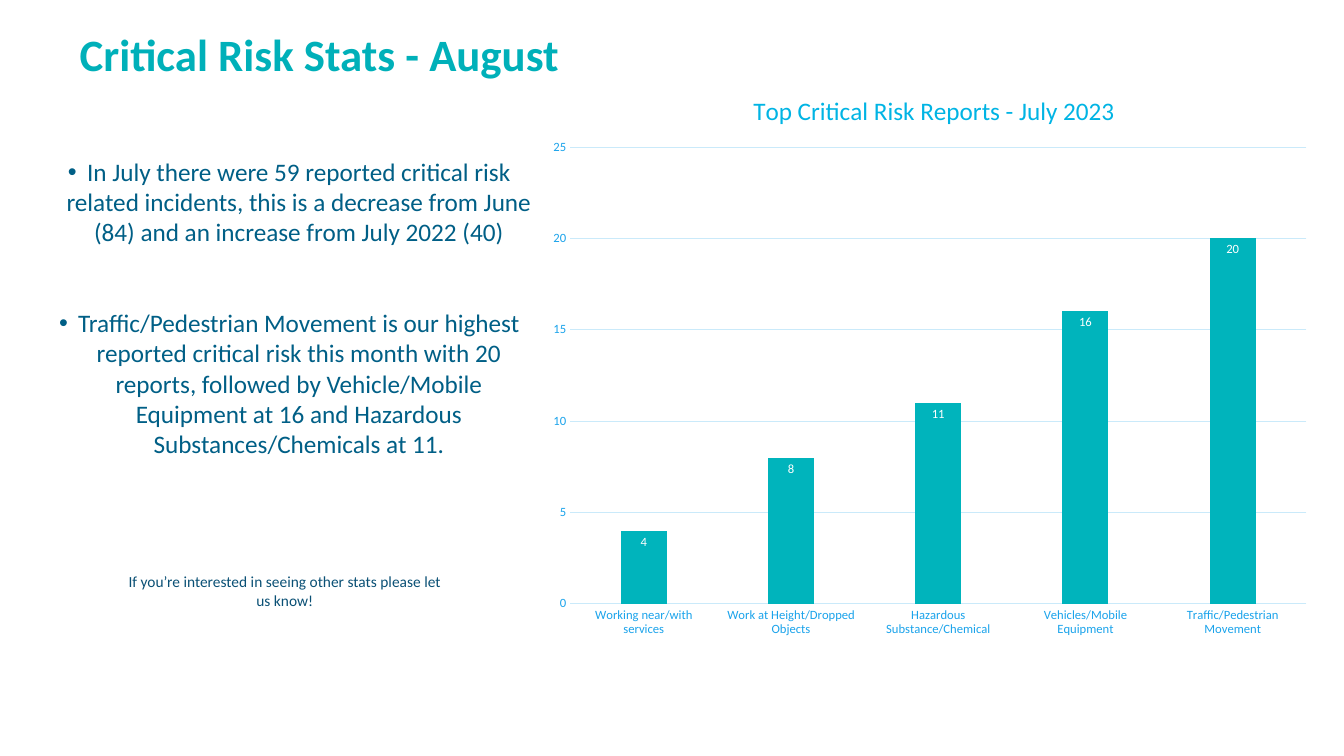
from lxml import etree
from pptx import Presentation
from pptx.chart.data import CategoryChartData
from pptx.dml.color import RGBColor
from pptx.enum.chart import XL_CHART_TYPE as ChartType, XL_LABEL_POSITION as LabelPosition
from pptx.enum.chart import XL_TICK_MARK as TickMark
from pptx.enum.text import MSO_ANCHOR as Anchor, MSO_AUTO_SIZE as AutoSize, PP_ALIGN as Align
from pptx.oxml.ns import qn
from pptx.util import Inches, Pt

TEAL = RGBColor(0x00, 0xB0, 0xB9)
BAR_TEAL = RGBColor(0x00, 0xB4, 0xBC)
DEEP_BLUE = RGBColor(0x00, 0x5F, 0x86)
NAVY = RGBColor(0x0A, 0x50, 0x75)
TITLE_BLUE = RGBColor(0x00, 0xB4, 0xE4)
AXIS_BLUE = RGBColor(0x1A, 0xA3, 0xEB)
GRID_BLUE = RGBColor(0xCA, 0xEA, 0xFA)
WHITE = RGBColor(0xFF, 0xFF, 0xFF)
FONT = "Calibri"
LINE_PITCH = 21.6


def style(font, size, color, bold=False):
    font.name, font.size, font.bold = FONT, Pt(size), bold
    font.color.rgb = color


def set_layout(parent, index, **values):
    """Place a chart part by fractions of the chart area."""
    for old in parent.findall(qn("c:layout")):
        parent.remove(old)
    layout = etree.Element(qn("c:layout"))
    manual = etree.SubElement(layout, qn("c:manualLayout"))
    for name, value in values.items():
        etree.SubElement(manual, qn("c:" + name)).set("val", str(value))
    parent.insert(index, layout)


deck = Presentation()
deck.slide_width, deck.slide_height = Inches(13.33), Inches(7.5)
page = deck.slides.add_slide(deck.slide_layouts[1])

# Title and body placeholders
title, body = page.shapes.title, page.placeholders[1]
for box, place in ((title, (0.69, 0.3, 11.95, 0.93)), (body, (0.33, 1.5, 5.08, 5.03))):
    box.left, box.top, box.width, box.height = map(Inches, place)
    box.text_frame.vertical_anchor = Anchor.TOP
    box.text_frame.auto_size = AutoSize.NONE

title.text_frame.text = "Critical Risk Stats - August"
para = title.text_frame.paragraphs[0]
para.alignment, para.line_spacing = Align.LEFT, Pt(32)
style(para.runs[0].font, 32, TEAL, True)

# Bulleted findings
body.text_frame.text = (
    "In July there were 59 reported critical risk related incidents, "
    "this is a decrease from June (84) and an increase from July 2022 (40)\n"
    "Traffic/Pedestrian Movement is our highest reported critical risk this month "
    "with 20 reports, followed by Vehicle/Mobile Equipment at 16 and "
    "Hazardous Substances/Chemicals at 11."
)
for number, para in enumerate(body.text_frame.paragraphs):
    para.alignment, para.line_spacing = Align.CENTER, Pt(LINE_PITCH)
    para.space_before = Pt(number * 2 * LINE_PITCH)
    properties = para._p.get_or_add_pPr()
    properties.set("marL", str(Inches(0.19)))
    properties.set("indent", str(Inches(-0.19)))
    etree.SubElement(properties, qn("a:buFont")).set("typeface", "Arial")
    etree.SubElement(properties, qn("a:buChar")).set("char", "•")
    style(para.runs[0].font, 18, DEEP_BLUE)

# Column chart
data = CategoryChartData()
data.categories = [
    "Working near/with services",
    "Work at Height/Dropped Objects",
    "Hazardous Substance/Chemical",
    "Vehicles/Mobile Equipment",
    "Traffic/Pedestrian Movement",
]
data.add_series("Series 1", (4, 8, 11, 16, 20))
chart = page.shapes.add_chart(
    ChartType.COLUMN_CLUSTERED, Inches(5.32), Inches(0.65), Inches(7.8), Inches(5.78), data
).chart
style(chart.font, 10, NAVY)
chart.has_legend = False
chart.has_title = True
chart.chart_title.include_in_layout = False
chart.chart_title.text_frame.text = "Top Critical Risk Reports - July 2023"
style(chart.chart_title.text_frame.paragraphs[0].runs[0].font, 18, TITLE_BLUE)
set_layout(chart.chart_title._element, 1, xMode="edge", yMode="edge", x=0.27, y=0.04)
set_layout(chart._chartSpace.chart.plotArea, 0, layoutTarget="inner",
           xMode="edge", yMode="edge", x=0.043, y=0.14, w=0.936, h=0.784)

# Columns and their labels
plot = chart.plots[0]
plot.gap_width, plot.overlap, plot.vary_by_categories = 219, -27, False
fill = plot.series[0].format.fill
fill.solid()
fill.fore_color.rgb = BAR_TEAL
labels = plot.series[0].data_labels
labels.show_value, labels.position = True, LabelPosition.INSIDE_END
style(labels.font, 9, WHITE)

# Axes
category_axis, value_axis = chart.category_axis, chart.value_axis
for axis in (category_axis, value_axis):
    axis.major_tick_mark = axis.minor_tick_mark = TickMark.NONE
    style(axis.tick_labels.font, 9, AXIS_BLUE)
value_axis.minimum_scale, value_axis.maximum_scale, value_axis.major_unit = 0, 25, 5
value_axis.format.line.fill.background()
for line in (category_axis.format.line, value_axis.major_gridlines.format.line):
    line.color.rgb, line.width = GRID_BLUE, Pt(0.75)

# Closing note
note = page.shapes.add_textbox(Inches(1.15), Inches(5.63), Inches(3.35), Inches(0.47))
note.text_frame.word_wrap = True
note.text_frame.auto_size = AutoSize.SHAPE_TO_FIT_TEXT
note.text_frame.text = "If you’re interested in seeing other stats please let us know!"
para = note.text_frame.paragraphs[0]
para.alignment = Align.CENTER
style(para.runs[0].font, 11, NAVY)

deck.save("out.pptx")
